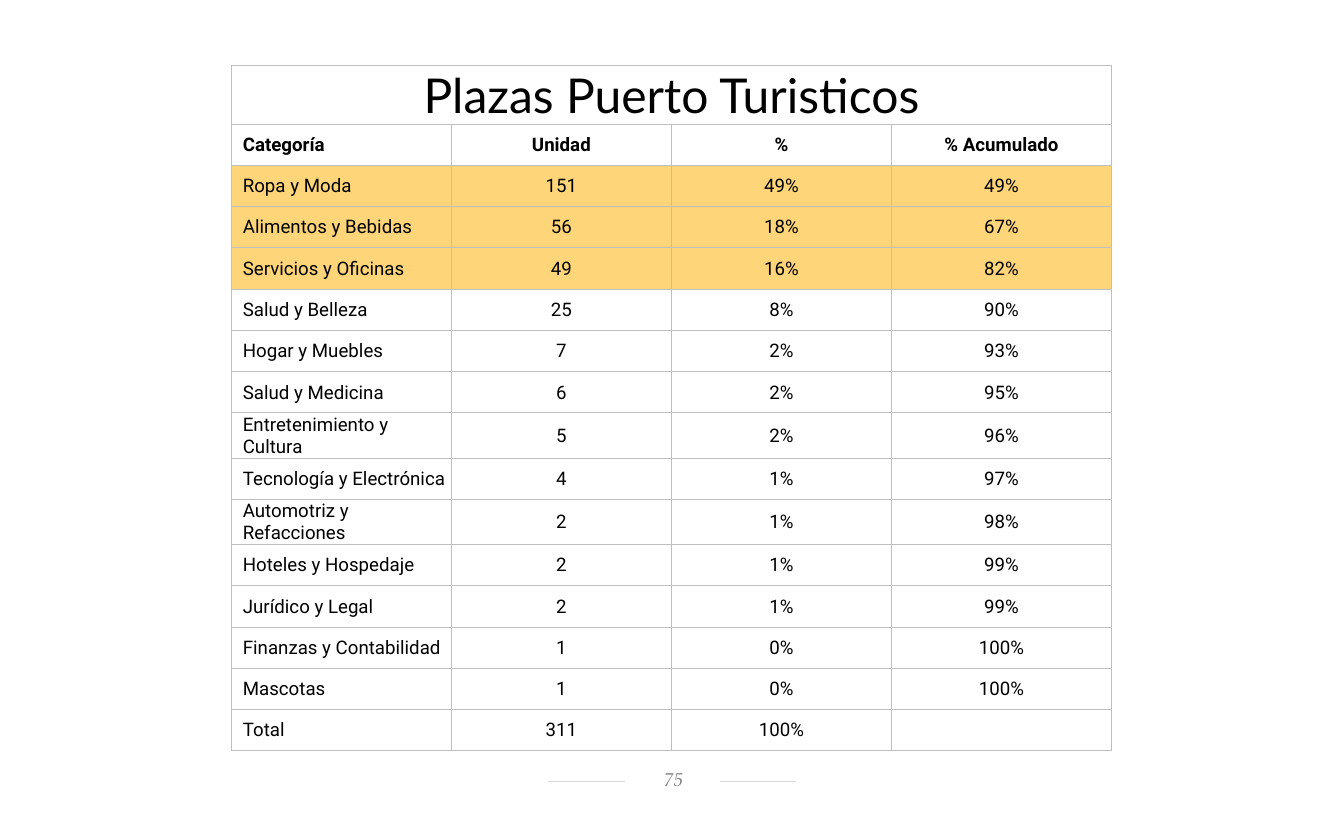
"""Build the slide with the table of shop categories and its page number."""
from typing import Any, NamedTuple

from pptx import Presentation, util as u
from pptx.dml import color
from pptx.enum import shapes, text
from pptx.oxml import parse_xml
from pptx.oxml.ns import nsdecls


class Row(NamedTuple):
    category: str
    units: str
    share: str
    total: str
    fill: str | None = None
    bold: bool = False


HIGHLIGHT = "FFD579"
TITLE = "Plazas Puerto Turisticos"
ROWS = [
    Row("Categoría", "Unidad", "%", "% Acumulado", bold=True),
    Row("Ropa y Moda", "151", "49%", "49%", HIGHLIGHT),
    Row("Alimentos y Bebidas", "56", "18%", "67%", HIGHLIGHT),
    Row("Servicios y Oficinas", "49", "16%", "82%", HIGHLIGHT),
    Row("Salud y Belleza", "25", "8%", "90%"),
    Row("Hogar y Muebles", "7", "2%", "93%"),
    Row("Salud y Medicina", "6", "2%", "95%"),
    Row("Entretenimiento y Cultura", "5", "2%", "96%"),
    Row("Tecnología y Electrónica", "4", "1%", "97%"),
    Row("Automotriz y Refacciones", "2", "1%", "98%"),
    Row("Hoteles y Hospedaje", "2", "1%", "99%"),
    Row("Jurídico y Legal", "2", "1%", "99%"),
    Row("Finanzas y Contabilidad", "1", "0%", "100%"),
    Row("Mascotas", "1", "0%", "100%"),
    Row("Total", "311", "100%", ""),
]
TITLE_FONT = {"name": "Lato", "size": u.Pt(36), "bold": False}
BODY_FONT = {"name": "Roboto", "size": u.Pt(14)}
PAGE_FONT = {"name": "TeX Gyre Pagella", "size": u.Pt(14), "italic": True}


def rgb(value: str) -> color.RGBColor:
    return color.RGBColor.from_string(value)


def assign(obj: Any, values: dict[str, Any]) -> None:
    for name, value in values.items():
        setattr(obj, name, value)


def write(p: Any, content: str, font: dict[str, Any], hex_color: str = "000000",
          align: Any = text.PP_ALIGN.CENTER) -> None:
    p.alignment = align
    r = p.add_run()
    r.text = content
    assign(r.font, font)
    r.font.color.rgb = rgb(hex_color)


def style_cell(cell: Any, fill: str | None, left: float = 0.01) -> None:
    assign(cell, {"margin_left": u.Inches(left), "margin_right": u.Inches(0.01),
                  "margin_top": u.Inches(0.01), "margin_bottom": u.Inches(0),
                  "vertical_anchor": text.MSO_ANCHOR.MIDDLE})
    tc_pr = cell._tc.get_or_add_tcPr()
    for side in "LRTB":
        tc_pr.append(parse_xml(
            f'<a:ln{side} {nsdecls("a")} w="{u.Pt(0.5)}"><a:solidFill>'
            f'<a:srgbClr val="BFBFBF"/></a:solidFill></a:ln{side}>'))
    if fill:
        cell.fill.solid()
        cell.fill.fore_color.rgb = rgb(fill)
    else:
        cell.fill.background()


def add_categories(s: Any) -> None:
    count, height = len(ROWS) + 1, u.Inches(0.43)
    table = s.shapes.add_table(count, 4, u.Inches(2.41), u.Inches(0.68),
                               u.Inches(9.17), height * count).table
    assign(table, {"first_row": False, "horz_banding": False})
    for row in table.rows:
        row.height = height
    for cell in table.rows[0].cells:
        style_cell(cell, None)
    table.cell(0, 0).merge(table.cell(0, 3))
    write(table.cell(0, 0).text_frame.paragraphs[0], TITLE, TITLE_FONT)
    for i, row in enumerate(ROWS, 1):
        for j, content in enumerate(row[:4]):
            cell = table.cell(i, j)
            style_cell(cell, row.fill, 0.01 if j else 0.12)
            if content:
                align = text.PP_ALIGN.CENTER if j else text.PP_ALIGN.LEFT
                write(cell.text_frame.paragraphs[0], content,
                      BODY_FONT | {"bold": row.bold}, align=align)


def add_page_number(s: Any, number: str) -> None:
    y = u.Inches(8.14)
    line = s.shapes.add_connector(shapes.MSO_CONNECTOR.STRAIGHT,
                                  u.Inches(5.71), y, u.Inches(8.29), y)
    line.line.color.rgb = rgb("D9D9D9")
    line.line.width = u.Pt(0.5)
    line._element.spPr.append(parse_xml(f'<a:effectLst {nsdecls("a")}/>'))
    sp = s.shapes.add_shape(shapes.MSO_SHAPE.RECTANGLE, u.Inches(6.51),
                            u.Inches(7.98), u.Inches(0.99), u.Inches(0.29))
    sp.shadow.inherit = False
    sp.fill.solid()
    sp.fill.fore_color.rgb = rgb("FFFFFF")
    sp.line.fill.background()
    tf = sp.text_frame
    assign(tf, {"margin_left": u.Inches(0.12), "margin_right": u.Inches(0.1),
                "margin_top": u.Inches(0.02), "margin_bottom": u.Inches(0.05),
                "vertical_anchor": text.MSO_ANCHOR.MIDDLE, "word_wrap": True})
    write(tf.paragraphs[0], number, PAGE_FONT, "808080")


def main() -> None:
    prs = Presentation()
    assign(prs, {"slide_width": u.Inches(14), "slide_height": u.Inches(8.5)})
    s = prs.slides.add_slide(prs.slide_layouts[6])
    add_page_number(s, "75")
    add_categories(s)
    prs.save("out.pptx")


if __name__ == "__main__":
    main()
